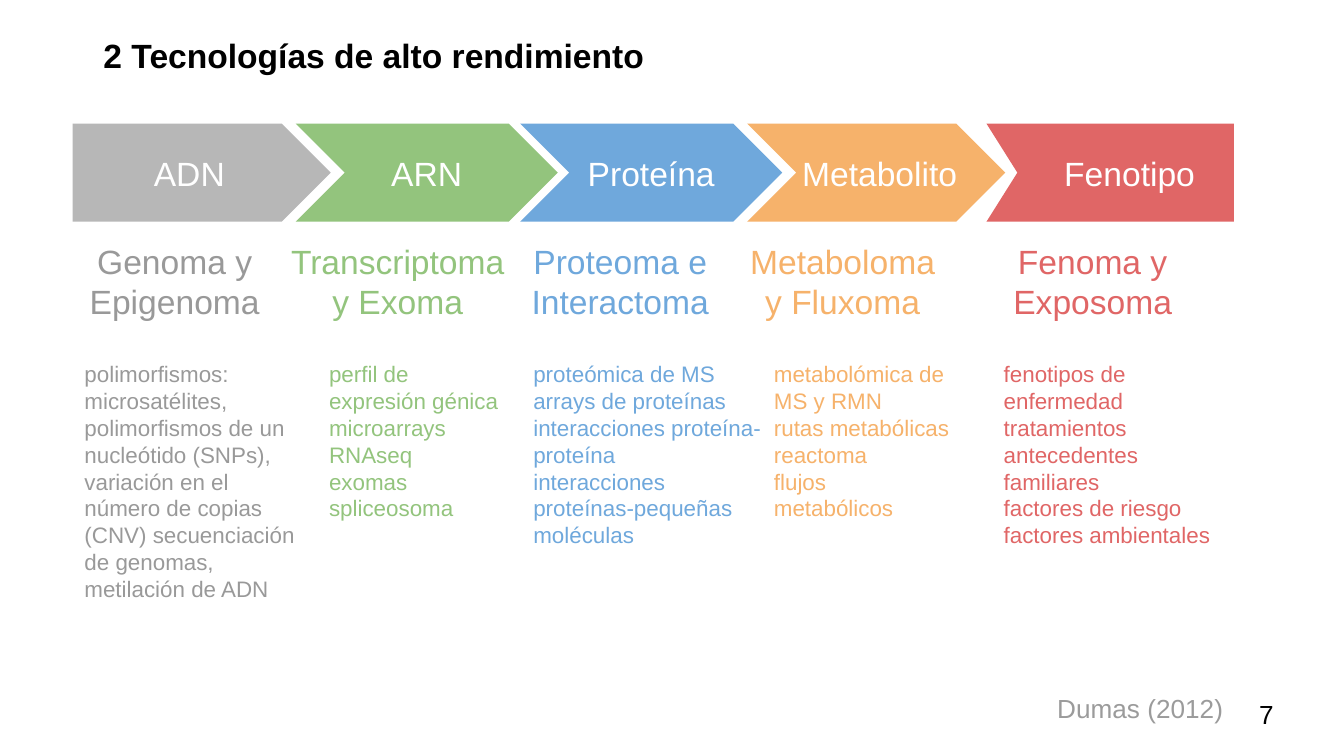
from pptx import Presentation
from pptx.dml.color import RGBColor
from pptx.enum.shapes import MSO_SHAPE
from pptx.enum.text import MSO_ANCHOR, MSO_AUTO_SIZE, PP_ALIGN
from pptx.util import Inches, Pt

LEFT, CENTER, RIGHT = PP_ALIGN.LEFT, PP_ALIGN.CENTER, PP_ALIGN.RIGHT
TOP, MIDDLE = MSO_ANCHOR.TOP, MSO_ANCHOR.MIDDLE
PENTAGON, CHEVRON = MSO_SHAPE.PENTAGON, MSO_SHAPE.CHEVRON

WHITE = RGBColor(0xFF, 0xFF, 0xFF)
BLACK = RGBColor(0x00, 0x00, 0x00)
SILVER = RGBColor(0xB7, 0xB7, 0xB7)
GRAY = RGBColor(0x99, 0x99, 0x99)
CITATION_GRAY = RGBColor(0x9B, 0x9B, 0x9B)
GREEN = RGBColor(0x93, 0xC4, 0x7D)
BLUE = RGBColor(0x6F, 0xA8, 0xDC)
ORANGE = RGBColor(0xF6, 0xB2, 0x6B)
RED = RGBColor(0xE0, 0x66, 0x66)

FONT = "Arial"
ARROW_TOP, ARROW_HEIGHT = 0.92, 0.73
HEADING_TOP, DETAIL_TOP, COLUMN_HEIGHT = 1.69, 2.58, 1.24

# Each place is (left, width); label_place is None when the arrow holds its label.
STAGES = [
    {"label": "ADN", "shape": PENTAGON, "fill": SILVER, "color": GRAY,
     "arrow": (0.54, 1.92), "label_place": None,
     "heading": "Genoma y Epigenoma", "heading_place": (0.48, 1.64),
     "details": ["polimorfismos:",
                 "microsatélites, polimorfismos de un nucleótido (SNPs), "
                 "variación en el número de copias (CNV) secuenciación "
                 "de genomas, metilación de ADN"],
     "detail_place": (0.53, 1.81)},
    {"label": "ARN", "shape": CHEVRON, "fill": GREEN, "color": GREEN,
     "arrow": (2.2, 1.95), "label_place": None,
     "heading": "Transcriptoma y Exoma", "heading_place": (2.01, 1.9),
     "details": ["perfil de expresión génica", "microarrays", "RNAseq",
                 "exomas", "spliceosoma"],
     "detail_place": (2.35, 1.46)},
    {"label": "Proteína", "shape": CHEVRON, "fill": BLUE, "color": BLUE,
     "arrow": (3.87, 1.95), "label_place": None,
     "heading": "Proteoma e Interactoma", "heading_place": (3.81, 1.61),
     "details": ["proteómica de MS", "arrays de proteínas",
                 "interacciones proteína-proteína",
                 "interacciones proteínas-pequeñas moléculas"],
     "detail_place": (3.87, 1.96)},
    {"label": "Metabolito", "shape": CHEVRON, "fill": ORANGE, "color": ORANGE,
     "arrow": (5.56, 1.92), "label_place": (5.7, 1.69),
     "heading": "Metaboloma y Fluxoma", "heading_place": (5.42, 1.7),
     "details": ["metabolómica de MS y RMN", "rutas metabólicas",
                 "reactoma", "flujos metabólicos"],
     "detail_place": (5.66, 1.52)},
    {"label": "Fenotipo", "shape": None, "fill": RED, "color": RED,
     "arrow": (7.34, 1.84), "label_place": (7.43, 1.95),
     "heading": "Fenoma y Exposoma", "heading_place": (7.37, 1.52),
     "details": ["fenotipos de enfermedad", "tratamientos",
                 "antecedentes familiares", "factores de riesgo",
                 "factores ambientales"],
     "detail_place": (7.37, 1.94)},
]


def write(shape, lines, size, color, align=LEFT, anchor=TOP, bold=False, inset=0.1):
    frame = shape.text_frame
    frame.word_wrap = True
    frame.auto_size = MSO_AUTO_SIZE.NONE
    frame.vertical_anchor = anchor
    frame.margin_left = frame.margin_right = Inches(0.1)
    frame.margin_top = frame.margin_bottom = Inches(inset)
    frame.text = "\n".join(lines)
    for paragraph in frame.paragraphs:
        paragraph.alignment = align
        font = paragraph.font
        font.name, font.size, font.bold = FONT, Pt(size), bold
        font.color.rgb = color


def add_text(slide, place, top, height, lines, size, color, **options):
    left, width = place
    box = slide.shapes.add_textbox(
        Inches(left), Inches(top), Inches(width), Inches(height))
    write(box, lines, size, color, **options)


def add_end_block(slide, left, width):
    """Rectangle with a notch in its left side that closes the chain."""
    right, bottom = left + width, ARROW_TOP + ARROW_HEIGHT
    builder = slide.shapes.build_freeform(
        Inches(left), Inches(ARROW_TOP), scale=1.0)
    corners = [(right, ARROW_TOP), (right, bottom), (left, bottom),
               (left + 0.23, ARROW_TOP + ARROW_HEIGHT / 2)]
    builder.add_line_segments(
        [(Inches(x), Inches(y)) for x, y in corners], close=True)
    return builder.convert_to_shape()


def add_stage(slide, stage):
    left, width = stage["arrow"]
    if stage["shape"] is None:
        arrow = add_end_block(slide, left, width)
    else:
        arrow = slide.shapes.add_shape(
            stage["shape"], Inches(left), Inches(ARROW_TOP),
            Inches(width), Inches(ARROW_HEIGHT))
    arrow.shadow.inherit = False
    arrow.fill.solid()
    arrow.fill.fore_color.rgb = stage["fill"]
    arrow.line.fill.background()

    label = [stage["label"]]
    if stage["label_place"]:
        add_text(slide, stage["label_place"], ARROW_TOP, ARROW_HEIGHT, label,
                 18, WHITE, align=CENTER, anchor=MIDDLE)
    else:
        write(arrow, label, 18, WHITE, align=CENTER, anchor=MIDDLE)
    add_text(slide, stage["heading_place"], HEADING_TOP, COLUMN_HEIGHT,
             [stage["heading"]], 18, stage["color"], align=CENTER)
    add_text(slide, stage["detail_place"], DETAIL_TOP, COLUMN_HEIGHT,
             stage["details"], 12, stage["color"])


def main():
    presentation = Presentation()
    presentation.slide_width = Inches(10)
    presentation.slide_height = Inches(10) * 9 // 16
    slide = presentation.slides.add_slide(presentation.slide_layouts[5])

    title = slide.shapes.title
    title.left, title.top = Inches(0.67), Inches(0.21)
    title.width, title.height = Inches(4.61), Inches(0.4)
    write(title, ["2 Tecnologías de alto rendimiento"], 18, BLACK,
          anchor=MIDDLE, bold=True, inset=0.05)

    for stage in STAGES:
        add_stage(slide, stage)

    add_text(slide, (7.76, 1.44), 5.1, 0.34, ["Dumas (2012)"], 14,
             CITATION_GRAY, align=RIGHT, inset=0.05)
    add_text(slide, (9.27, 0.6), 5.1, 0.43, ["7"], 14, BLACK, anchor=MIDDLE)

    presentation.save("out.pptx")


if __name__ == "__main__":
    main()
